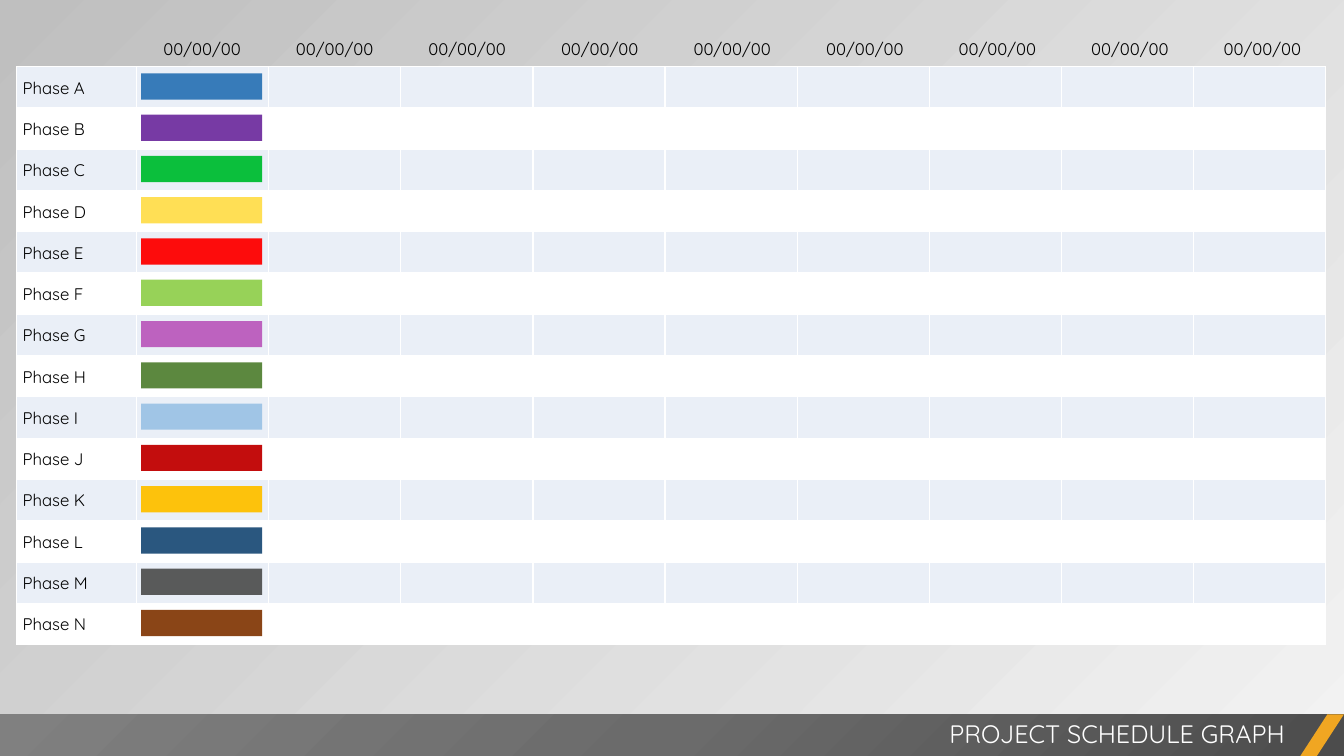
from dataclasses import dataclass

from lxml import etree
from pptx import Presentation
from pptx import util as u
from pptx.dml import color, fill
from pptx.enum import shapes, text
from pptx.oxml import ns
from pptx.oxml import parse_xml
from pptx.shapes import autoshape
from pptx.slide import Slide
from pptx.table import _Cell
from pptx.text.text import TextFrame

FONT = "Quicksand"
DATE_COUNT = 9
ROW_HEIGHT = 1.04
LABEL_WIDTH, DATE_WIDTH = 3.02, 3.33
DATE_PITCH = 3.34


@dataclass(frozen=True)
class Phase:
    name: str
    bar: str


@dataclass(frozen=True)
class Box:
    left: float
    top: float
    width: float
    height: float

    def emu(self) -> tuple[int, ...]:
        return tuple(u.Cm(v) for v in (self.left, self.top, self.width, self.height))


PHASES = [
    Phase("Phase A", "2E75B6"),
    Phase("Phase B", "7030A0"),
    Phase("Phase C", "00BD32"),
    Phase("Phase D", "FFDE4C"),
    Phase("Phase E", "FF0000"),
    Phase("Phase F", "92D050"),
    Phase("Phase G", "BB5BBD"),
    Phase("Phase H", "548235"),
    Phase("Phase I", "9DC3E6"),
    Phase("Phase J", "C00000"),
    Phase("Phase K", "FFC000"),
    Phase("Phase L", "1F4E79"),
    Phase("Phase M", "525252"),
    Phase("Phase N", "843C0B"),
]


def rgb(value: str) -> color.RGBColor:
    return color.RGBColor.from_string(value)


def paint(target: fill.FillFormat, value: str) -> None:
    target.solid()
    target.fore_color.rgb = rgb(value)


def set_alpha(el: etree._Element, percent: int) -> None:
    clr = next(el.iter(ns.qn("a:srgbClr")))
    etree.SubElement(clr, ns.qn("a:alpha"), val=str(percent * 1000))


def add_run(tf: TextFrame, words: str, size: int, value: str, align: text.PP_ALIGN) -> None:
    p = tf.paragraphs[0]
    p.alignment = align
    r = p.add_run()
    r.text = words
    r.font.name = FONT
    r.font.size = u.Pt(size)
    r.font.color.rgb = rgb(value)


def add_label(s: Slide, box: Box, words: str, size: int, value: str, align: text.PP_ALIGN) -> None:
    tf = s.shapes.add_textbox(*box.emu()).text_frame
    tf.word_wrap = True
    tf.auto_size = text.MSO_AUTO_SIZE.SHAPE_TO_FIT_TEXT
    add_run(tf, words, size, value, align)


def add_block(s: Slide, kind: shapes.MSO_SHAPE, box: Box, value: str) -> autoshape.Shape:
    sp = s.shapes.add_shape(kind, *box.emu())
    sp.shadow.inherit = False
    sp.line.fill.background()
    paint(sp.fill, value)
    return sp


def set_borders(cell: _Cell) -> None:
    tc_pr = cell._tc.get_or_add_tcPr()
    for i, side in enumerate(("lnL", "lnR", "lnT", "lnB")):
        tc_pr.insert(i, parse_xml(
            f'<a:{side} {ns.nsdecls("a")} w="12700"><a:solidFill>'
            f'<a:srgbClr val="FFFFFF"/></a:solidFill></a:{side}>'))


def add_background(s: Slide) -> None:
    bg = s.background.fill
    bg.gradient()
    bg.gradient_angle = 135
    for stop, value in zip(bg.gradient_stops, ("F2F2F2", "BFBFBF")):
        stop.color.rgb = rgb(value)
    set_alpha(s._element, 40)


def add_schedule(s: Slide) -> None:
    box = Box(0.42, 1.68, LABEL_WIDTH + DATE_COUNT * DATE_WIDTH, len(PHASES) * ROW_HEIGHT)
    table = s.shapes.add_table(len(PHASES), DATE_COUNT + 1, *box.emu()).table
    table.first_row = False
    table.horz_banding = False
    for i, column in enumerate(table.columns):
        column.width = u.Cm(DATE_WIDTH if i else LABEL_WIDTH)
    for i, (row, phase) in enumerate(zip(table.rows, PHASES)):
        row.height = u.Cm(ROW_HEIGHT)
        for cell in row.cells:
            paint(cell.fill, "FFFFFF" if i % 2 else "EAEFF7")
            set_borders(cell)
            cell.margin_left = u.Cm(0.15)
            cell.margin_right = cell.margin_top = u.Cm(0.03)
            cell.margin_bottom = 0
            cell.vertical_anchor = text.MSO_ANCHOR.MIDDLE
        add_run(row.cells[0].text_frame, phase.name, 12, "000000", text.PP_ALIGN.LEFT)


def add_bars(s: Slide) -> None:
    for i, phase in enumerate(PHASES):
        box = Box(3.56, 1.85 + i * ROW_HEIGHT, 3.05, 0.66)
        sp = add_block(s, shapes.MSO_SHAPE.RECTANGLE, box, phase.bar)
        set_alpha(sp._element.spPr, 95)


def add_footer(s: Slide) -> None:
    band = add_block(s, shapes.MSO_SHAPE.RECTANGLE, Box(0, 18, 33.87, 1.05), "6B6B6B")
    stops = "".join(
        f'<a:gs pos="{pos * 1000}"><a:srgbClr val="{value}"/></a:gs>'
        for pos, value in ((0, "4C4C4C"), (50, "6B6B6B"), (100, "808080")))
    solid = band._element.spPr.find(ns.qn("a:solidFill"))
    band._element.spPr.replace(solid, parse_xml(
        f'<a:gradFill {ns.nsdecls("a")}><a:gsLst>{stops}</a:gsLst><a:path path="circle">'
        '<a:fillToRect l="100000" t="100000"/></a:path></a:gradFill>'))
    stripe = add_block(s, shapes.MSO_SHAPE.PARALLELOGRAM, Box(32.77, 18, 1.1, 1.05), "F0A622")
    stripe.adjustments[0] = 0.65
    add_label(s, Box(13.33, 17.98, 19.3, 1.02), "PROJECT SCHEDULE GRAPH", 18, "FFFFFF",
              text.PP_ALIGN.RIGHT)


def add_dates(s: Slide) -> None:
    for i in range(DATE_COUNT):
        box = Box(3.42 + i * DATE_PITCH, 0.86, 3.35, 0.77)
        add_label(s, box, "00/00/00", 12, "000000", text.PP_ALIGN.CENTER)


def main() -> None:
    prs = Presentation()
    prs.slide_width, prs.slide_height = u.Cm(33.87), u.Cm(19.05)
    s = prs.slides.add_slide(prs.slide_layouts[6])
    add_background(s)
    add_schedule(s)
    add_bars(s)
    add_footer(s)
    add_dates(s)
    prs.save("out.pptx")


if __name__ == "__main__":
    main()
